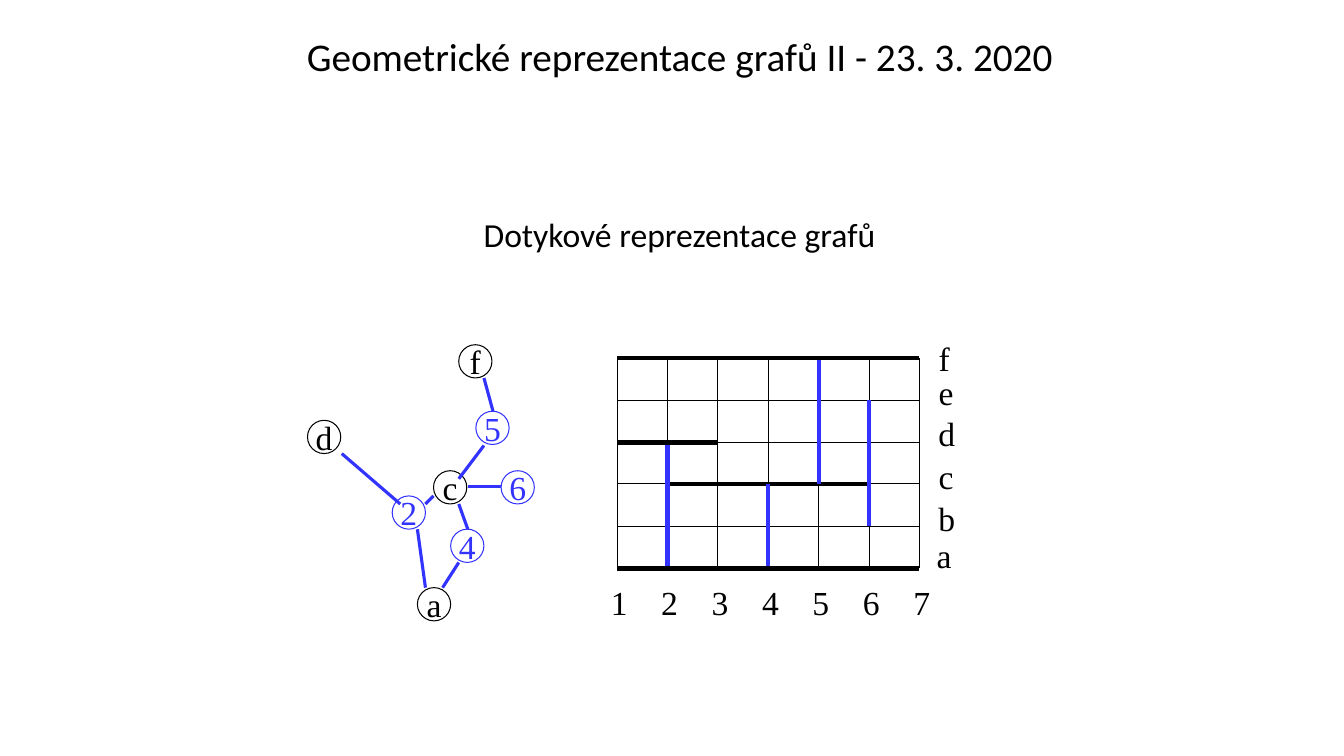
from dataclasses import dataclass

from lxml.etree import SubElement
from pptx import Presentation
from pptx.dml.color import RGBColor
from pptx.enum.shapes import MSO_CONNECTOR, MSO_SHAPE
from pptx.enum.text import MSO_ANCHOR, MSO_AUTO_SIZE, PP_ALIGN
from pptx.oxml.ns import qn
from pptx.shapes.base import BaseShape
from pptx.slide import Slide
from pptx.text.text import TextFrame
from pptx.util import Pt

EMU_PER_PX = 9144  # 100 px to the inch


@dataclass(frozen=True)
class Theme:
    black: RGBColor = RGBColor(0x00, 0x00, 0x00)
    blue: RGBColor = RGBColor(0x33, 0x33, 0xFF)
    white: RGBColor = RGBColor(0xFF, 0xFF, 0xFF)
    heading_font: str = "Calibri"
    label_font: str = "Times New Roman"
    title_size: int = 28
    text_size: int = 24
    thin: float = 0.75
    edge: float = 2.25
    thick: float = 3


THEME = Theme()


@dataclass(frozen=True)
class Node:
    text: str
    left: int
    top: int
    color: RGBColor = THEME.black


@dataclass(frozen=True)
class Label:
    text: str
    left: int
    top: int
    width: int = 37


@dataclass(frozen=True)
class Segment:
    x1: int
    y1: int
    x2: int
    y2: int
    color: RGBColor = THEME.black
    width: float = THEME.thin


NODE_SIZE = 33
LABEL_HEIGHT = 50
COLUMNS = [612 + 50 * column for column in range(7)]
ROWS = [round(564 - 41.8 * row) for row in range(6)]
LEFT, RIGHT, BOTTOM, TOP = COLUMNS[0], COLUMNS[-1], ROWS[0], ROWS[-1]

NODES = [
    Node("d", 305, 417),
    Node("c", 430, 467),
    Node("f", 455, 342),
    Node("a", 414, 583),
    Node("2", 389, 492, THEME.blue),
    Node("5", 472, 408, THEME.blue),
    Node("6", 497, 467, THEME.blue),
    Node("4", 447, 525, THEME.blue),
]
EDGES = [
    Segment(*ends, THEME.blue, THEME.edge)
    for ends in [
        (339, 450, 397, 500),
        (414, 525, 422, 583),
        (422, 500, 430, 492),
        (439, 583, 455, 558),
        (455, 500, 464, 525),
        (464, 483, 497, 483),
        (455, 475, 480, 442),
        (480, 375, 489, 408),
    ]
]
GRID = [Segment(LEFT, y, RIGHT, y) for y in ROWS] + [
    Segment(x, TOP, x, BOTTOM) for x in COLUMNS
]
ROW_LABELS = [
    Label("a", 919, 526, 35),
    Label("b", 921, 489),
    Label("c", 921, 447, 35),
    Label("d", 921, 405),
    Label("e", 921, 364, 35),
    Label("f", 921, 330, 31),
]
COLUMN_LABELS = [
    Label(str(number), x - 16, 572) for number, x in enumerate(COLUMNS, start=1)
]


def horizontal(row: int, first: int, last: int) -> Segment:
    """Thick segment on a grid row, between two numbered columns."""
    y = ROWS[row]
    return Segment(COLUMNS[first - 1], y, COLUMNS[last - 1], y, width=THEME.thick)


def vertical(column: int, first: int, last: int) -> Segment:
    """Thick blue segment on a numbered column, between two rows."""
    x = COLUMNS[column - 1]
    return Segment(x, ROWS[first], x, ROWS[last], THEME.blue, THEME.thick)


CONTACTS = [
    horizontal(2, 2, 6),
    vertical(2, 0, 3),
    vertical(4, 0, 2),
    vertical(5, 2, 5),
    vertical(6, 1, 4),
    horizontal(0, 1, 7),
    horizontal(3, 1, 3),
    horizontal(5, 1, 7),
]


def px(length: int) -> int:
    return length * EMU_PER_PX


def place(shape: BaseShape, left: int, top: int, width: int, height: int) -> None:
    shape.left, shape.top = px(left), px(top)
    shape.width, shape.height = px(width), px(height)


def write(
    frame: TextFrame,
    text: str,
    *,
    font: str = THEME.label_font,
    size: int = THEME.text_size,
    color: RGBColor = THEME.black,
    align: PP_ALIGN = PP_ALIGN.CENTER,
    anchor: MSO_ANCHOR = MSO_ANCHOR.TOP,
    wrap: bool = False,
    auto_size: MSO_AUTO_SIZE = MSO_AUTO_SIZE.NONE,
    line_spacing: float = 1.0,
) -> None:
    frame.word_wrap = wrap
    frame.auto_size = auto_size
    frame.vertical_anchor = anchor
    paragraph = frame.paragraphs[0]
    paragraph.alignment = align
    paragraph.line_spacing = line_spacing
    paragraph.space_before = Pt(0)
    run = paragraph.add_run()
    run.text = text
    run.font.name = font
    run.font.size = Pt(size)
    run.font.color.rgb = color


def draw_node(slide: Slide, node: Node) -> None:
    shape = slide.shapes.add_shape(
        MSO_SHAPE.OVAL, px(node.left), px(node.top), px(NODE_SIZE), px(NODE_SIZE)
    )
    shape.shadow.inherit = False
    shape.fill.solid()
    shape.fill.fore_color.rgb = THEME.white
    shape.line.color.rgb = node.color
    shape.line.width = Pt(THEME.thin)
    write(shape.text_frame, node.text, color=node.color, anchor=MSO_ANCHOR.MIDDLE)


def draw_segment(slide: Slide, segment: Segment) -> None:
    connector = slide.shapes.add_connector(
        MSO_CONNECTOR.STRAIGHT,
        px(segment.x1), px(segment.y1), px(segment.x2), px(segment.y2),
    )
    connector.line.color.rgb = segment.color
    connector.line.width = Pt(segment.width)
    SubElement(connector._element.spPr, qn("a:effectLst"))


def draw_label(slide: Slide, label: Label) -> None:
    box = slide.shapes.add_textbox(
        px(label.left), px(label.top), px(label.width), px(LABEL_HEIGHT)
    )
    write(box.text_frame, label.text, align=PP_ALIGN.LEFT,
          auto_size=MSO_AUTO_SIZE.SHAPE_TO_FIT_TEXT)


def main() -> None:
    presentation = Presentation()
    presentation.slide_width, presentation.slide_height = px(1333), px(750)
    slide = presentation.slides.add_slide(presentation.slide_layouts[0])

    title, subtitle = slide.shapes.title, slide.placeholders[1]
    place(title, 174, 23, 1000, 61)
    write(title.text_frame, "Geometrické reprezentace grafů II - 23. 3. 2020",
          font=THEME.heading_font, size=THEME.title_size,
          anchor=MSO_ANCHOR.BOTTOM, wrap=True, line_spacing=0.9)
    place(subtitle, 56, 111, 1236, 594)
    subtitle.text_frame.margin_top = px(106)
    write(subtitle.text_frame, "Dotykové reprezentace grafů",
          font=THEME.heading_font, wrap=True, line_spacing=0.9)

    for node in NODES:
        draw_node(slide, node)
    for segment in GRID:
        draw_segment(slide, segment)
    for label in ROW_LABELS + COLUMN_LABELS:
        draw_label(slide, label)
    for segment in CONTACTS + EDGES:
        draw_segment(slide, segment)
    presentation.save("out.pptx")


if __name__ == "__main__":
    main()
